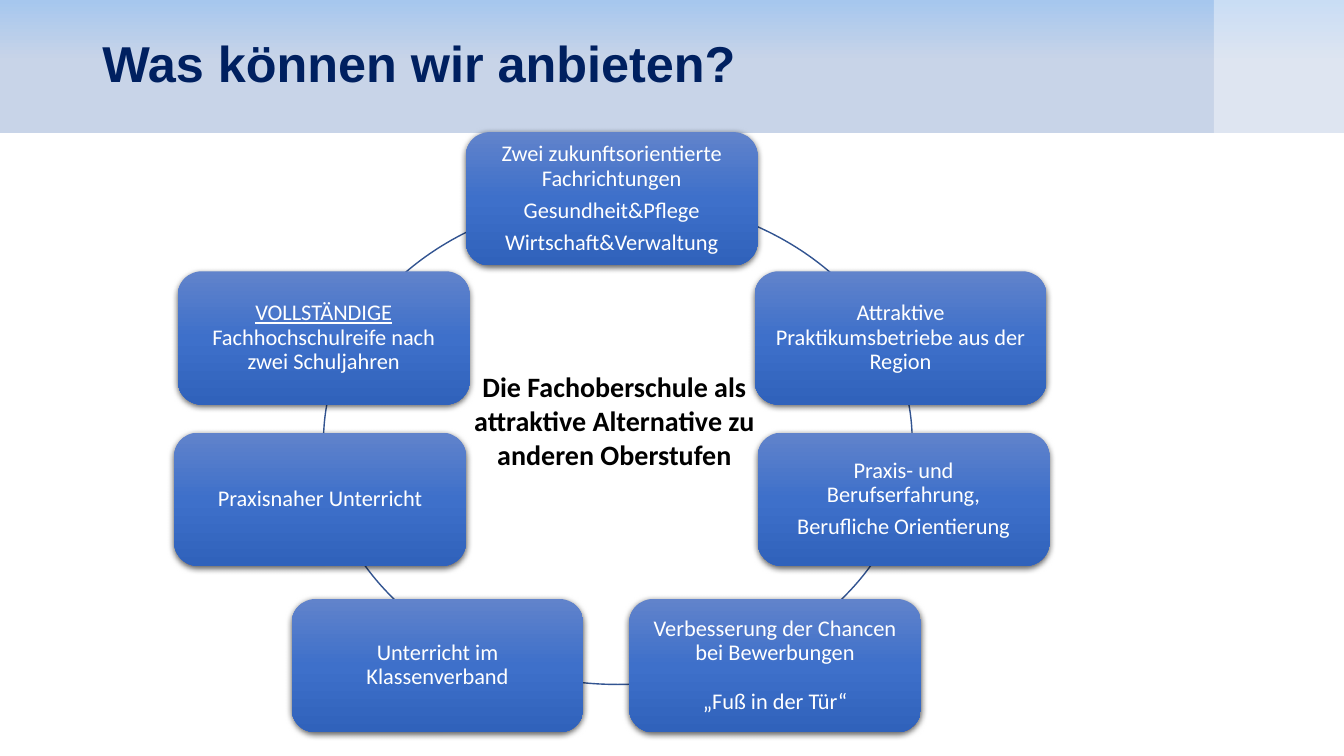
from copy import deepcopy
from dataclasses import dataclass
from typing import Optional

from lxml.etree import SubElement
from pptx import Presentation
from pptx.dml.color import ColorFormat, RGBColor
from pptx.enum.shapes import MSO_SHAPE as Form
from pptx.enum.text import MSO_ANCHOR as Anchor, PP_ALIGN as Align
from pptx.oxml.ns import qn
from pptx.shapes.autoshape import Shape
from pptx.slide import Slide
from pptx.text.text import TextFrame
from pptx.util import Pt


@dataclass(frozen=True)
class Box:
    left: float
    top: float
    width: float
    height: float


@dataclass(frozen=True)
class Style:
    font: str
    size: float
    color: str
    bold: bool = False
    align: Align = Align.CENTER
    pitch: float = 0.9


@dataclass(frozen=True)
class Line:
    text: str
    tail: str = ""
    gap: float = 5.6


@dataclass(frozen=True)
class Card:
    left: float
    top: float
    lines: tuple[Line, ...]


@dataclass(frozen=True)
class Stop:
    place: float
    color: str


WIDTH, HEIGHT = 960, 540
CARD_W, CARD_H = 208.5, 95.2
HIGH, MID, LOW = 193.8, 309, 427.9

TITLE = Style("Arial", 36, "002060", True, Align.LEFT)
CORE = Style("Calibri", 20, "000000", True, pitch=1)
LABEL = Style("Calibri", 16, "FFFFFF")

BAND = (Stop(0, "A6C7EE"), Stop(0.46, "C8D4E8"))
GLOSS = (Stop(0, "6183CB"), Stop(0.5, "3E70CA"), Stop(1, "3062BB"))

CARDS = (
    Card(332.7, 94.4, (
        Line("Zwei zukunftsorientierte Fachrichtungen"),
        Line("Gesundheit&Pflege"),
        Line("Wirtschaft&Verwaltung"),
    )),
    Card(539, HIGH, (Line("Attraktive Praktikumsbetriebe aus der Region"),)),
    Card(541.2, MID, (
        Line("Praxis- und Berufserfahrung,"),
        Line("Berufliche Orientierung"),
    )),
    Card(449.4, LOW, (
        Line("Verbesserung der Chancen bei Bewerbungen"),
        Line("„Fuß in der Tür“", gap=17.4),
    )),
    Card(208.3, LOW, (Line("Unterricht im Klassenverband"),)),
    Card(127, HIGH, (
        Line("VOLLSTÄNDIGE", " Fachhochschulreife nach zwei Schuljahren"),
    )),
    Card(124.4, MID, (Line("Praxisnaher Unterricht"),)),
)


def paint(color: ColorFormat, code: str) -> None:
    color.rgb = RGBColor.from_string(code)


def add_form(slide: Slide, form: Form, box: Box) -> Shape:
    shape = slide.shapes.add_shape(
        form, Pt(box.left), Pt(box.top), Pt(box.width), Pt(box.height))
    shape.shadow.inherit = False
    shape.line.fill.background()
    return shape


def shade(shape: Shape, stops: tuple[Stop, ...]) -> None:
    shape.fill.gradient()
    shape.fill.gradient_angle = 270
    nodes = next(shape.element.spPr.iter(qn("a:gsLst")))
    for _ in stops[2:]:
        nodes.append(deepcopy(nodes[0]))
    for node, stop in zip(shape.fill.gradient_stops, stops):
        node.position = stop.place
        paint(node.color, stop.color)


def cast(shape: Shape) -> None:
    root = shape.element.spPr.find(qn("a:effectLst"))
    drop = SubElement(root, qn("a:outerShdw"), blurRad=str(Pt(4.5)),
                      dist=str(Pt(1.5)), dir="5400000", algn="ctr",
                      rotWithShape="0")
    tint = SubElement(drop, qn("a:srgbClr"), val="000000")
    SubElement(tint, qn("a:alpha"), val="63000")


def write(frame: TextFrame, lines: tuple[Line, ...], style: Style) -> None:
    frame.word_wrap = True
    for spot, line in enumerate(lines):
        para = frame.add_paragraph() if spot else frame.paragraphs[0]
        para.text = line.text
        para.alignment = style.align
        para.line_spacing = style.pitch
        if spot:
            para.space_before = Pt(line.gap)
        if line.tail:
            para.runs[0].font.underline = True
            para.add_run().text = line.tail
        for run in para.runs:
            run.font.name = style.font
            run.font.size = Pt(style.size)
            run.font.bold = style.bold
            paint(run.font.color, style.color)


def add_note(slide: Slide, box: Box, text: str, style: Style,
             anchor: Optional[Anchor] = None) -> None:
    note = slide.shapes.add_textbox(
        Pt(box.left), Pt(box.top), Pt(box.width), Pt(box.height))
    note.text_frame.vertical_anchor = anchor
    write(note.text_frame, (Line(text),), style)


def add_head(slide: Slide) -> None:
    shade(add_form(slide, Form.RECTANGLE, Box(0, 0, WIDTH, 95)), BAND)
    veil = add_form(slide, Form.RECTANGLE, Box(867, 0, WIDTH - 867, HEIGHT))
    veil.fill.solid()
    paint(veil.fill.fore_color, "FFFFFF")
    tint = next(veil.element.spPr.iter(qn("a:srgbClr")))
    SubElement(tint, qn("a:alpha"), val="40000")
    add_note(slide, Box(66, 9.4, 828, 75.6), "Was können wir anbieten?",
             TITLE, Anchor.MIDDLE)


def add_ring(slide: Slide) -> None:
    ring = add_form(slide, Form.OVAL, Box(231.1, 141.1, 420.5, 347.8))
    ring.fill.background()
    paint(ring.line.color, "325491")
    ring.line.width = Pt(1)


def add_card(slide: Slide, card: Card) -> None:
    shape = add_form(slide, Form.ROUNDED_RECTANGLE,
                     Box(card.left, card.top, CARD_W, CARD_H))
    shape.adjustments[0] = 0.18
    shade(shape, GLOSS)
    cast(shape)
    frame = shape.text_frame
    frame.margin_left = frame.margin_right = Pt(8.6)
    frame.margin_top = frame.margin_bottom = Pt(8.6)
    frame.vertical_anchor = Anchor.MIDDLE
    write(frame, card.lines, LABEL)


def main() -> None:
    deck = Presentation()
    deck.slide_width, deck.slide_height = Pt(WIDTH), Pt(HEIGHT)
    slide = deck.slides.add_slide(deck.slide_layouts[6])
    add_head(slide)
    add_note(slide, Box(330.5, 260.6, 216.7, 79.9),
             "Die Fachoberschule als attraktive Alternative zu anderen Oberstufen",
             CORE)
    add_ring(slide)
    for card in CARDS:
        add_card(slide, card)
    deck.save("out.pptx")


if __name__ == "__main__":
    main()
